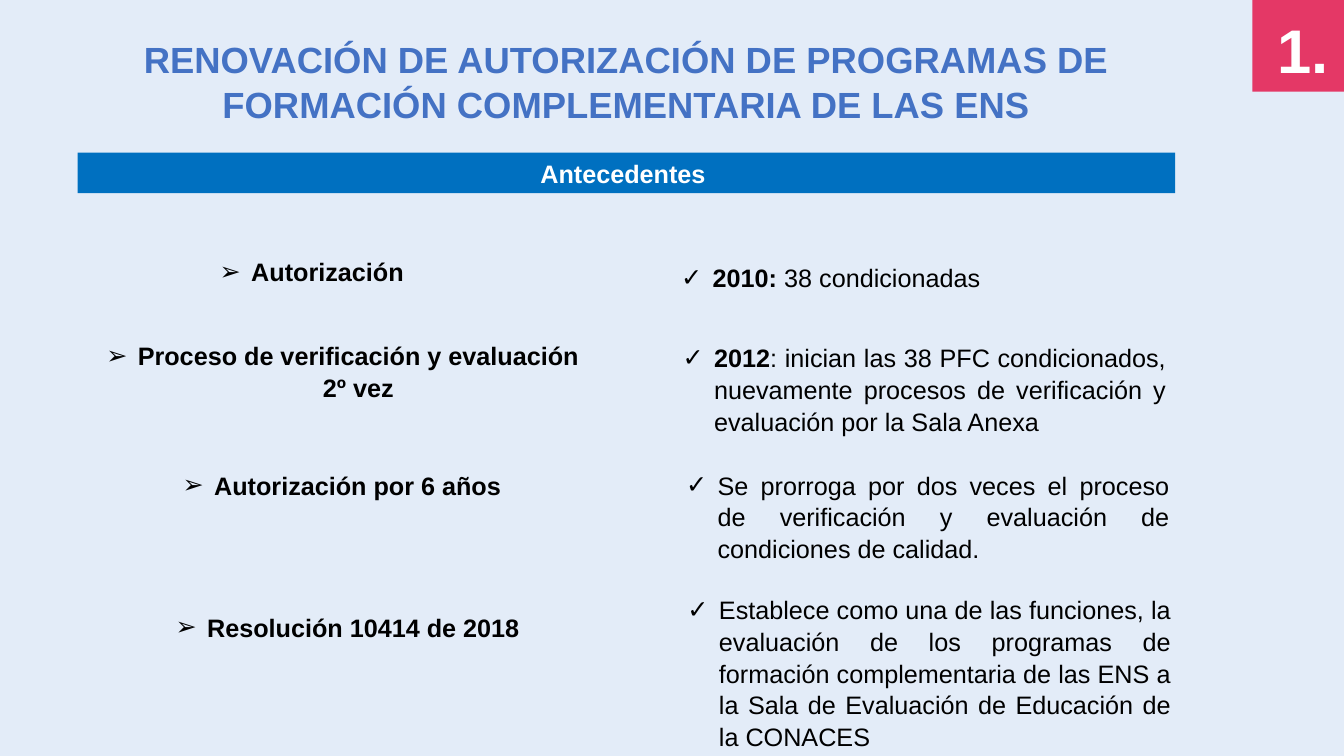
from lxml import etree
from pptx import Presentation
from pptx.dml.color import RGBColor
from pptx.enum.shapes import MSO_SHAPE
from pptx.enum.text import MSO_ANCHOR, PP_ALIGN
from pptx.oxml.ns import qn
from pptx.util import Pt

RECT = MSO_SHAPE.RECTANGLE
LEFT, MID, JUST = PP_ALIGN.LEFT, PP_ALIGN.CENTER, PP_ALIGN.JUSTIFY
TOP, CENTER = MSO_ANCHOR.TOP, MSO_ANCHOR.MIDDLE

# Content
TITLE = ("RENOVACIÓN DE AUTORIZACIÓN DE PROGRAMAS DE "
         "FORMACIÓN COMPLEMENTARIA DE LAS ENS")
HEAD = "Antecedentes "
NUMBER = "1."
# Each item: left, top, height, bold text, plain text
STEPS = [
    (45.5, 178.5, 29, "Autorización ", ""),
    (65, 238.5, 51, "Proceso de verificación y evaluación 2º vez", ""),
    (67, 331, 29, "Autorización por 6 años ", ""),
    (68.5, 432.5, 29, "Resolución 10414 de 2018", ""),
]
FACTS = [
    (479.5, 183, 29, "2010: ", "38 condicionadas "),
    (480.5, 240, 73, "2012", ": inician las 38 PFC condicionados, nuevamente "
     "procesos de verificación y evaluación por la Sala Anexa "),
    (483, 331, 73, "", "Se prorroga por dos veces el proceso de verificación "
     "y evaluación de condiciones de calidad. "),
    (484, 420, 117, "", "Establece como una de las funciones, la evaluación "
     "de los programas de formación complementaria de las ENS a la Sala de "
     "Evaluación de Educación de la CONACES "),
]
COLUMNS = [(STEPS, "➢", MID), (FACTS, "✓", JUST)]

# Measures and colours
EDGE, WIDE, ITEM, INDENT = 55.5, 784, 359.5, 22.5
BADGE = 65.5
PALE, PINK, BLUE, TITLE_BLUE = "E3ECF8", "E43866", "0070C0", "4472C4"
WHITE, BLACK = "FFFFFF", "000000"


def color(code):
    return RGBColor.from_string(code)


def place(shape, x, y, w, h):
    shape.left, shape.top, shape.width, shape.height = map(Pt, (x, y, w, h))


def write(shape, runs, size, code, align, anchor=TOP):
    """Fill a shape with one paragraph of (text, bold) runs."""
    frame = shape.text_frame
    form = {"word_wrap": True, "vertical_anchor": anchor,
            "margin_left": Pt(7.2), "margin_right": Pt(7.2),
            "margin_top": Pt(3.6), "margin_bottom": Pt(3.6)}
    for key, value in form.items():
        setattr(frame, key, value)
    para = frame.paragraphs[0]
    para.alignment, para.line_spacing = align, 1.05
    for text, bold in runs:
        if not text:
            continue
        run = para.add_run()
        run.text = text
        form = {"name": "Arial", "size": Pt(size), "bold": bold}
        for key, value in form.items():
            setattr(run.font, key, value)
        run.font.color.rgb = color(code)
    return para


def bullet(para, sign):
    props = para._p.get_or_add_pPr()
    props.set("marL", str(Pt(INDENT)))
    props.set("indent", str(-Pt(INDENT)))
    etree.SubElement(props, qn("a:buFont")).set("typeface", "Arial")
    etree.SubElement(props, qn("a:buChar")).set("char", sign)


def block(x, y, w, h, code):
    shape = slide.shapes.add_shape(RECT, Pt(x), Pt(y), Pt(w), Pt(h))
    shape.shadow.inherit = False
    shape.fill.solid()
    shape.fill.fore_color.rgb = color(code)
    shape.line.fill.background()
    return shape


def label(x, y, w, h):
    return slide.shapes.add_textbox(Pt(x), Pt(y), Pt(w), Pt(h))


# Slide
deck = Presentation()
deck.slide_width, deck.slide_height = Pt(960), Pt(540)
slide = deck.slides.add_slide(deck.slide_layouts[5])
slide.background.fill.solid()
slide.background.fill.fore_color.rgb = color(PALE)

# Title
title = slide.shapes.title
place(title, EDGE, 21, WIDE, 70.5)
write(title, [(TITLE, True)], 26, TITLE_BLUE, MID)

# Section number in the corner
block(960 - BADGE, 0, BADGE, BADGE, PINK)
write(label(905.5, 2, 54.5, 60.5), [(NUMBER, True)], 44, WHITE, LEFT)

# Heading bar
bar = block(EDGE, 109, WIDE, 29, BLUE)
write(bar, [(HEAD, True)], 18, WHITE, MID, CENTER)

# Steps on the left, facts on the right
for items, sign, align in COLUMNS:
    for x, y, h, strong, plain in items:
        runs = [(strong, True), (plain, False)]
        bullet(write(label(x, y, ITEM, h), runs, 18, BLACK, align), sign)

deck.save("out.pptx")
